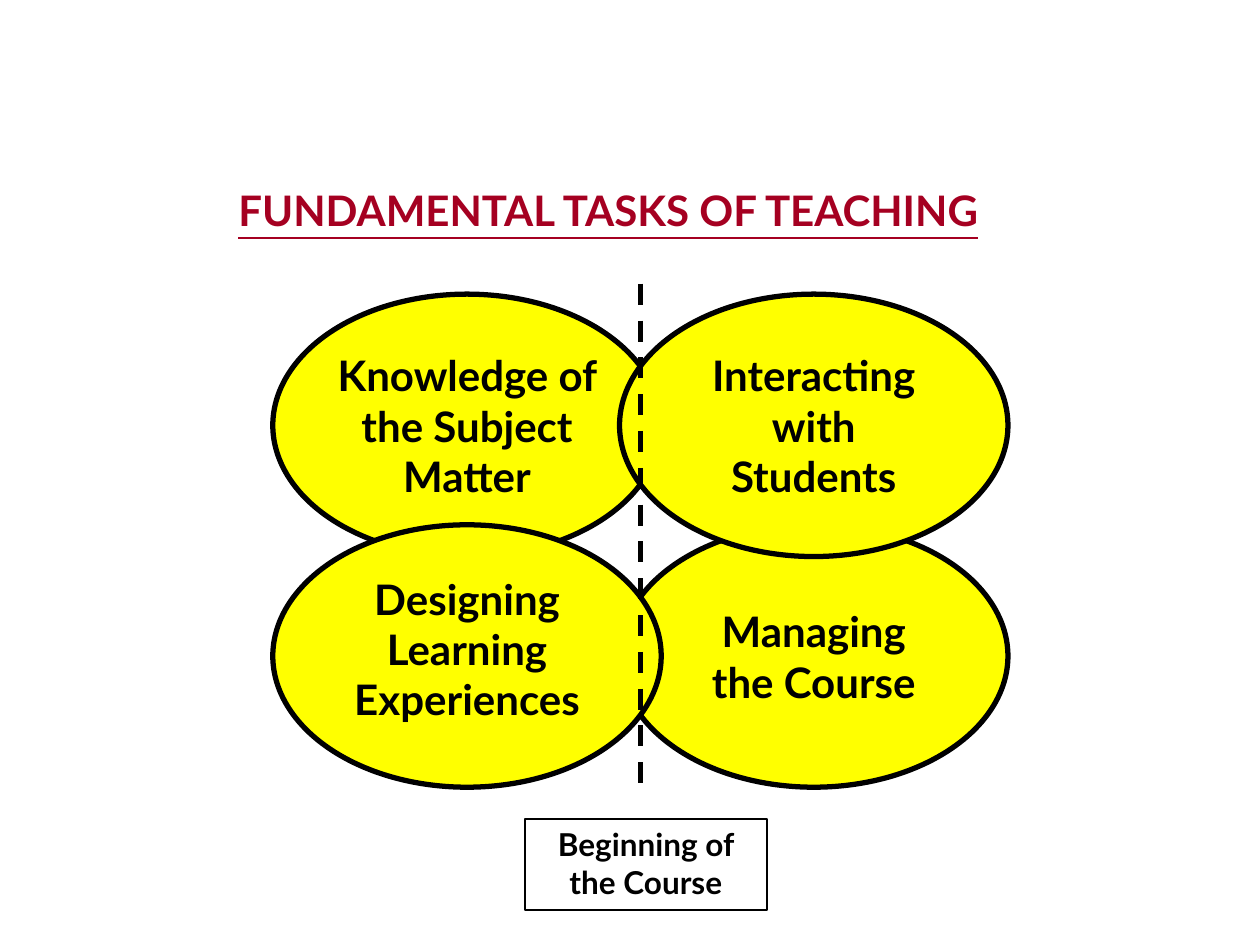
"""Build the slide on the fundamental tasks of teaching."""
from dataclasses import dataclass
from typing import Any

from lxml.etree import SubElement
from pptx import Presentation
from pptx.dml.color import RGBColor
from pptx.enum.dml import MSO_LINE
from pptx.enum.shapes import MSO_CONNECTOR, MSO_SHAPE
from pptx.enum.text import MSO_ANCHOR, MSO_AUTO_SIZE, PP_ALIGN
from pptx.oxml.ns import qn
from pptx.util import Cm, Pt

BLACK = RGBColor(0x00, 0x00, 0x00)
YELLOW = RGBColor(0xFF, 0xFF, 0x00)
CRIMSON = RGBColor(0xA5, 0x00, 0x21)

FRAME_FORMAT = {
    "word_wrap": True,
    "auto_size": MSO_AUTO_SIZE.NONE,
    "vertical_anchor": MSO_ANCHOR.TOP,
}
FONT_FORMAT = {"name": "Lato", "size": Pt(24), "bold": True}

OVAL_WIDTH, OVAL_HEIGHT = 7.83, 5.29
COLUMN_LEFTS = (5.5, 12.49)
ROW_TOPS = (5.93, 10.58)


@dataclass
class Task:
    """One task of teaching, with its grid cell and text area in centimetres."""
    text: str
    column: int
    row: int
    text_top: float
    text_width: float
    text_height: float = 3.3


TASKS = (
    Task("Managing the Course", 1, 1, 12.09, 5.51, 2.29),
    Task("Knowledge of the Subject Matter", 0, 0, 6.93, 6.55),
    Task("Interacting with Students", 1, 0, 6.93, 5.72),
    Task("Designing Learning Experiences", 0, 1, 11.43, 5.72),
)


def apply_format(target: Any, values: dict[str, Any]) -> None:
    """Set each named attribute on the target."""
    for name, value in values.items():
        setattr(target, name, value)


def write_text(shape: Any, text: str, color: RGBColor = BLACK,
               alignment: PP_ALIGN = PP_ALIGN.CENTER, **font_values: Any) -> None:
    """Write one formatted paragraph into the shape."""
    apply_format(shape.text_frame, FRAME_FORMAT)
    paragraph = shape.text_frame.paragraphs[0]
    paragraph.alignment = alignment
    run = paragraph.add_run()
    run.text = text
    apply_format(run.font, FONT_FORMAT | font_values)
    run.font.color.rgb = color


def set_line(shape: Any, width: float) -> None:
    """Give the shape a black line."""
    shape.line.color.rgb = BLACK
    shape.line.width = Pt(width)


def add_title(slide: Any) -> None:
    """Place and fill the title placeholder."""
    title = slide.shapes.title
    apply_format(title, {"left": Cm(4.55), "top": Cm(3.6),
                         "width": Cm(16.3), "height": Cm(1.27)})
    write_text(title, "FUNDAMENTAL TASKS OF TEACHING", CRIMSON,
               PP_ALIGN.LEFT, underline=True)


def add_task(slide: Any, task: Task) -> None:
    """Draw a task as a grouped oval and centred text."""
    group = slide.shapes.add_group_shape()
    left = COLUMN_LEFTS[task.column]
    oval = group.shapes.add_shape(
        MSO_SHAPE.OVAL, Cm(left), Cm(ROW_TOPS[task.row]),
        Cm(OVAL_WIDTH), Cm(OVAL_HEIGHT))
    oval.shadow.inherit = False
    oval.fill.solid()
    oval.fill.fore_color.rgb = YELLOW
    set_line(oval, 3)
    text_left = left + (OVAL_WIDTH - task.text_width) / 2
    text_box = group.shapes.add_textbox(
        Cm(text_left), Cm(task.text_top),
        Cm(task.text_width), Cm(task.text_height))
    write_text(text_box, task.text)


def add_divider(slide: Any) -> None:
    """Draw the dashed vertical divider."""
    divider = slide.shapes.add_connector(
        MSO_CONNECTOR.STRAIGHT, Cm(12.91), Cm(5.72), Cm(12.91), Cm(16.09))
    set_line(divider, 3)
    divider.line.dash_style = MSO_LINE.DASH
    SubElement(divider._element.spPr, qn("a:effectLst"))


def add_caption(slide: Any) -> None:
    """Draw the outlined caption below the divider."""
    caption = slide.shapes.add_shape(
        MSO_SHAPE.RECTANGLE, Cm(10.58), Cm(16.51), Cm(4.88), Cm(1.83))
    caption.shadow.inherit = False
    caption.fill.background()
    set_line(caption, 1)
    write_text(caption, "Beginning of the Course", size=Pt(18))


def main() -> None:
    """Assemble and save the presentation."""
    presentation = Presentation()
    apply_format(presentation, {"slide_width": Cm(25.4), "slide_height": Cm(19.05)})
    slide = presentation.slides.add_slide(presentation.slide_layouts[5])
    add_title(slide)
    for task in TASKS:
        add_task(slide, task)
    add_divider(slide)
    add_caption(slide)
    presentation.save("out.pptx")


if __name__ == "__main__":
    main()
